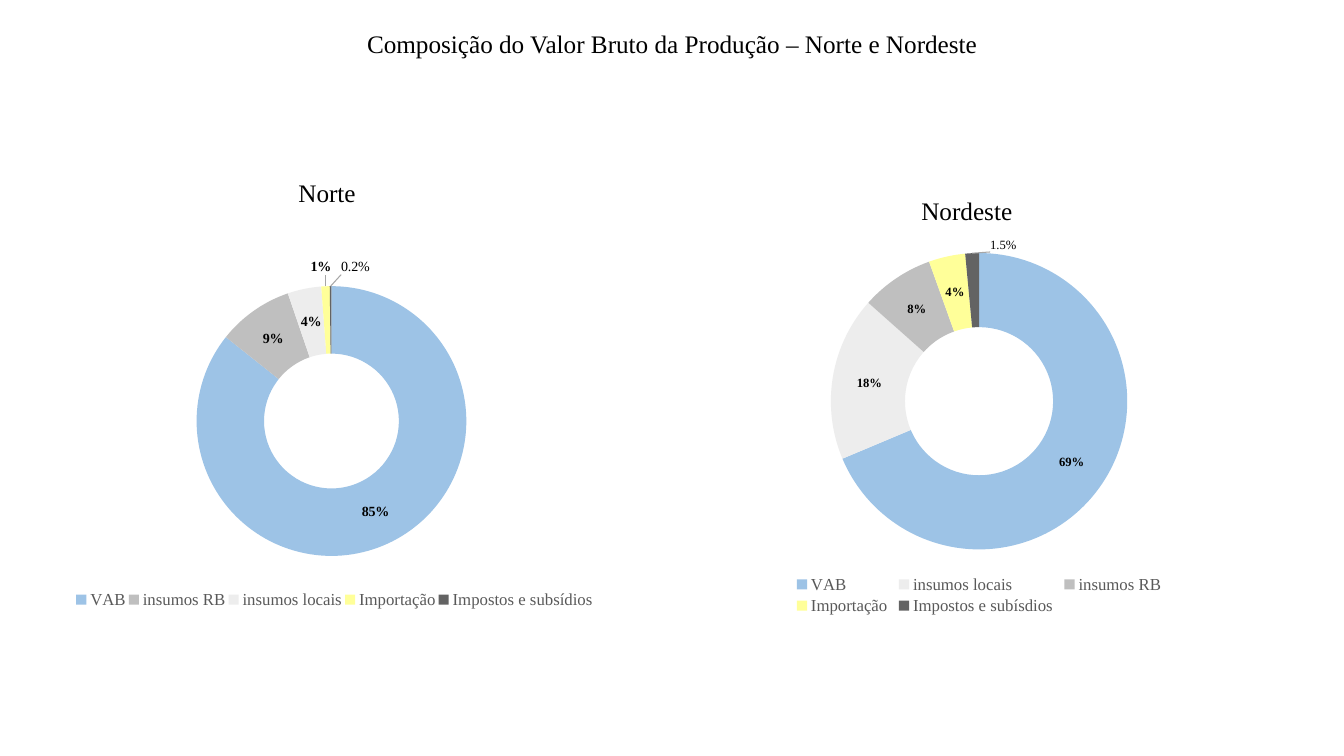
"""Slide with two doughnut charts on the make-up of gross output, Norte and Nordeste."""
from lxml.etree import SubElement
from pptx import Presentation
from pptx.chart.data import CategoryChartData
from pptx.dml.color import RGBColor
from pptx.enum.chart import XL_CHART_TYPE, XL_LEGEND_POSITION
from pptx.enum.text import MSO_ANCHOR, MSO_AUTO_SIZE, PP_ALIGN
from pptx.oxml.ns import qn
from pptx.util import Pt

COLORS = {
    "text": "000000",
    "legend": "595959",
    "leader": "A6A6A6",
    "VAB": "9DC3E6",
    "insumos RB": "BFBFBF",
    "insumos locais": "EDEDED",
    "Importação": "FFFF99",
    "Impostos": "636363",
}
FONT = "Times New Roman"


def write_text(text_frame, text, size=18, bold=False, color="text", align=PP_ALIGN.LEFT):
    text_frame.text = text
    paragraph = text_frame.paragraphs[0]
    paragraph.alignment = align
    font = paragraph.runs[0].font
    font.name, font.size, font.bold = FONT, Pt(size), bold
    font.color.rgb = RGBColor.from_string(COLORS[color])


def place_manually(parent, position, inner=False):
    for old_layout in parent.findall(qn("c:layout")):
        parent.remove(old_layout)
    layout = SubElement(parent, qn("c:layout"))
    manual = SubElement(layout, qn("c:manualLayout"))
    if inner:
        SubElement(manual, qn("c:layoutTarget")).set("val", "inner")
    if len(position) == 4:
        for mode in ("xMode", "yMode"):
            SubElement(manual, qn(f"c:{mode}")).set("val", "edge")
    for name, value in zip("xywh", position):
        SubElement(manual, qn(f"c:{name}")).set("val", str(value))
    parent.insert(0 if inner else 1, layout)


regions = [
    {
        "name": "Norte",
        "title": (209.52, 123.12, 63.36, 28.8),
        "frame": (21.6, 180, 439.2, 271.44),
        "plot": (0.27, 0.09, 0.44, 0.71),
        "legend": (0.07, 0.88, 0.85, 0.07),
        "values": {"VAB": 85, "insumos RB": 9, "insumos locais": 4,
                   "Importação": 1, "Impostos e subsídios": 0.2},
        "label_size": 10,
        "value_offsets": {3: (-0.01, -0.14)},
        "last_label": "0.2%",
        "last_offset": (0.04, -0.14),
    },
    {
        "name": "Nordeste",
        "title": (654.48, 136.08, 90, 28.8),
        "frame": (433.44, 169.92, 526.56, 271.44),
        "plot": (0.3, 0.04, 0.41, 0.78),
        "legend": (0.25, 0.88, 0.51, 0.12),
        "values": {"VAB": 69, "insumos locais": 18, "insumos RB": 8,
                   "Importação": 4, "Impostos e subísdios": 1.5},
        "label_size": 9,
        "value_offsets": {},
        "last_label": "1.5%",
        "last_offset": (0.04, -0.12),
    },
]

presentation = Presentation()
presentation.slide_width, presentation.slide_height = Pt(960), Pt(540)
slide = presentation.slides.add_slide(presentation.slide_layouts[5])

heading = slide.shapes.title
heading.left, heading.top, heading.width, heading.height = map(Pt, (138.96, 16.56, 682.56, 28.8))
write_text(heading.text_frame, "Composição do Valor Bruto da Produção – Norte e Nordeste",
           align=PP_ALIGN.CENTER)
text_frames = [heading.text_frame]

for region in regions:
    chart_data = CategoryChartData(number_format="General")
    chart_data.categories = list(region["values"])
    chart_data.add_series(region["name"], region["values"].values())
    graphic = slide.shapes.add_chart(XL_CHART_TYPE.DOUGHNUT, *map(Pt, region["frame"]), chart_data)
    chart = graphic.chart
    chart.has_title = False
    chart.font.name, chart.font.size = "Arial", Pt(10)
    place_manually(chart.plots[0]._element.getparent(), region["plot"], inner=True)

    chart.has_legend = True
    legend = chart.legend
    legend.position = XL_LEGEND_POSITION.BOTTOM
    legend.include_in_layout = False
    legend.font.name, legend.font.size = FONT, Pt(12)
    legend.font.color.rgb = RGBColor.from_string(COLORS["legend"])
    place_manually(legend._element, region["legend"])

    series = chart.plots[0].series[0]
    for index, category in enumerate(region["values"]):
        color = category if category in COLORS else "Impostos"
        point_format = series.points[index].format
        point_format.fill.solid()
        point_format.fill.fore_color.rgb = RGBColor.from_string(COLORS[color])
        point_format.line.fill.background()

    labels = series.data_labels
    labels.show_value, labels.show_percentage = True, False
    labels.show_legend_key = False
    labels.number_format, labels.number_format_is_linked = '0"%"', False
    label_fonts = [labels.font]
    for index in region["value_offsets"]:
        label_fonts.append(series.points[index].data_label.font)
    for font in label_fonts:
        font.name, font.size, font.bold = FONT, Pt(region["label_size"]), True
        font.color.rgb = RGBColor.from_string(COLORS["text"])

    last_index = len(region["values"]) - 1
    write_text(series.points[last_index].data_label.text_frame, region["last_label"],
               size=region["label_size"])
    offsets = {**region["value_offsets"], last_index: region["last_offset"]}
    for label in labels._element.findall(qn("c:dLbl")):
        place_manually(label, offsets[int(label.find(qn("c:idx")).get("val"))])
    for leader in labels._element.findall(qn("c:showLeaderLines")):
        labels._element.remove(leader)
    SubElement(labels._element, qn("c:showLeaderLines")).set("val", "1")
    leader_lines = SubElement(labels._element, qn("c:leaderLines"))
    leader_format = SubElement(leader_lines, qn("c:spPr"))
    leader_line = SubElement(leader_format, qn("a:ln"), w=str(Pt(0.75)))
    leader_fill = SubElement(leader_line, qn("a:solidFill"))
    SubElement(leader_fill, qn("a:srgbClr")).set("val", COLORS["leader"])

    title = slide.shapes.add_textbox(*map(Pt, region["title"]))
    write_text(title.text_frame, region["name"])
    text_frames.append(title.text_frame)

for text_frame in text_frames:
    text_frame.word_wrap = True
    text_frame.auto_size = MSO_AUTO_SIZE.SHAPE_TO_FIT_TEXT
    text_frame.vertical_anchor = MSO_ANCHOR.TOP
    text_frame.margin_left = text_frame.margin_right = Pt(3.6)
    text_frame.margin_top = text_frame.margin_bottom = Pt(3.6)

presentation.save("out.pptx")
